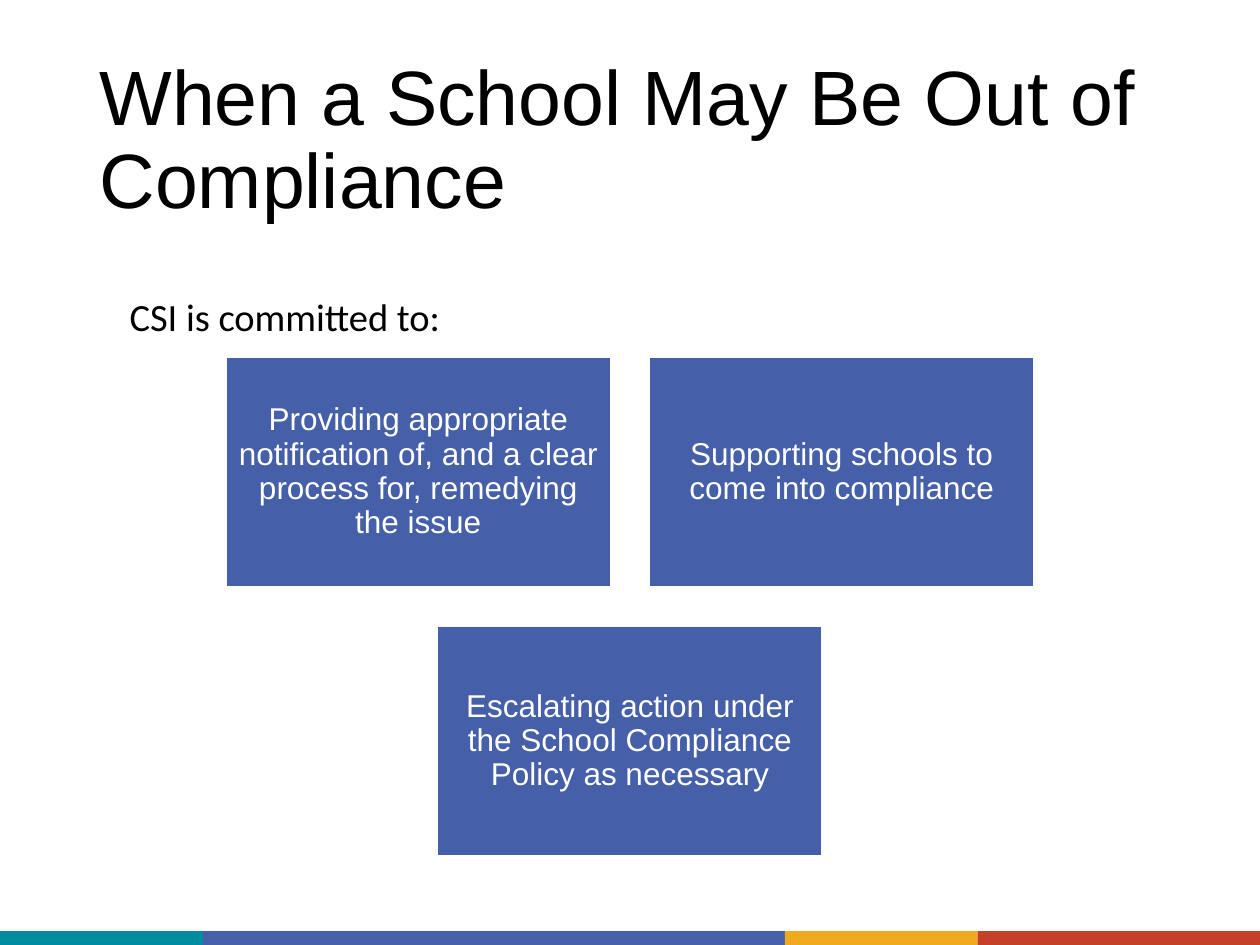
from pptx import Presentation
from pptx.dml.color import RGBColor
from pptx.enum.shapes import MSO_SHAPE
from pptx.enum.text import MSO_ANCHOR, MSO_AUTO_SIZE, PP_ALIGN
from pptx.util import Inches, Pt

BLACK = RGBColor(0x00, 0x00, 0x00)
WHITE = RGBColor(0xFF, 0xFF, 0xFF)
TEAL = RGBColor(0x00, 0x8C, 0xA0)
BLUE = RGBColor(0x45, 0x5F, 0xA9)
AMBER = RGBColor(0xEF, 0xAA, 0x1F)
RED = RGBColor(0xC6, 0x3F, 0x28)

SLIDE_W, SLIDE_H = 10, 7.5
STRIPE_H = 0.11
STRIPES = [(TEAL, 1.61), (BLUE, 4.62), (AMBER, 1.53), (RED, 2.24)]

BOX_W, BOX_H, BOX_GAP = 3.06, 1.83, 0.3
BOX_TOP, ROW_PITCH = 2.83, 2.14
COMMITMENT_ROWS = [
    ["Providing appropriate notification of, and a clear process for, remedying the issue",
     "Supporting schools to come into compliance"],
    ["Escalating action under the School Compliance Policy as necessary"],
]


def set_font(p, name, size, color):
    p.font.name = name
    p.font.size = Pt(size)
    p.font.color.rgb = color


def add_rect(slide, left, top, width, height, fill):
    sp = slide.shapes.add_shape(MSO_SHAPE.RECTANGLE, Inches(left), Inches(top),
                                Inches(width), Inches(height))
    sp.shadow.inherit = False
    sp.fill.solid()
    sp.fill.fore_color.rgb = fill
    sp.line.fill.background()
    return sp


def add_footer_stripes(slide):
    left = 0
    for color, width in STRIPES:
        add_rect(slide, left, SLIDE_H - STRIPE_H, width, STRIPE_H, color)
        left += width


def set_title(slide, text):
    title = slide.shapes.title
    title.left, title.top = Inches(0.69), Inches(0.4)
    title.width, title.height = Inches(8.62), Inches(1.45)
    tf = title.text_frame
    tf.text = text
    tf.word_wrap = True
    tf.auto_size = MSO_AUTO_SIZE.NONE
    tf.vertical_anchor = MSO_ANCHOR.MIDDLE
    p = tf.paragraphs[0]
    p.alignment = PP_ALIGN.LEFT
    p.line_spacing = 0.9
    set_font(p, "Arial", 44, BLACK)


def add_lead_in(slide, text):
    box = slide.shapes.add_textbox(Inches(0.93), Inches(2.28), Inches(2.88), Inches(0.47))
    tf = box.text_frame
    tf.word_wrap = True
    tf.auto_size = MSO_AUTO_SIZE.SHAPE_TO_FIT_TEXT
    tf.text = text
    set_font(tf.paragraphs[0], "Calibri", 22, BLACK)


def add_commitment(slide, left, top, text):
    sp = add_rect(slide, left, top, BOX_W, BOX_H, BLUE)
    sp.line.color.rgb = WHITE
    sp.line.width = Pt(1.5)
    tf = sp.text_frame
    tf.word_wrap = True
    tf.vertical_anchor = MSO_ANCHOR.MIDDLE
    tf.margin_left = tf.margin_right = tf.margin_top = tf.margin_bottom = Inches(0.07)
    tf.text = text
    p = tf.paragraphs[0]
    p.alignment = PP_ALIGN.CENTER
    p.line_spacing = 0.9
    set_font(p, "Arial", 18, WHITE)


def add_commitment_rows(slide):
    """Centre each row of boxes on the slide."""
    for row, texts in enumerate(COMMITMENT_ROWS):
        row_w = len(texts) * (BOX_W + BOX_GAP) - BOX_GAP
        for col, text in enumerate(texts):
            left = (SLIDE_W - row_w) / 2 + col * (BOX_W + BOX_GAP)
            add_commitment(slide, left, BOX_TOP + row * ROW_PITCH, text)


def main():
    prs = Presentation()
    prs.slide_width, prs.slide_height = Inches(SLIDE_W), Inches(SLIDE_H)
    slide = prs.slides.add_slide(prs.slide_layouts[5])
    add_footer_stripes(slide)
    set_title(slide, "When a School May Be Out of Compliance")
    add_commitment_rows(slide)
    add_lead_in(slide, "CSI is committed to:")
    prs.save("out.pptx")


if __name__ == "__main__":
    main()
